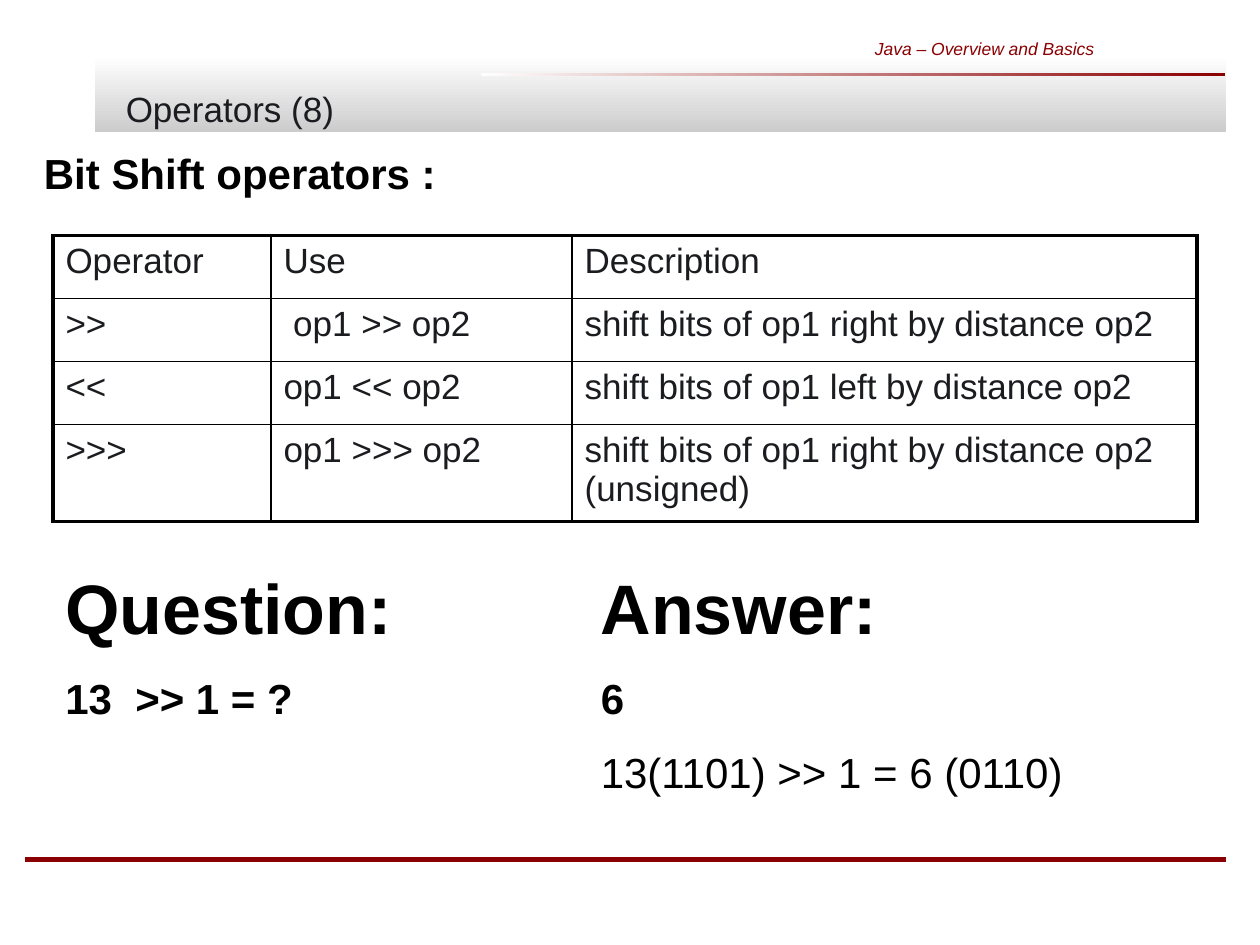
from lxml import etree
from pptx import Presentation
from pptx.dml.color import RGBColor
from pptx.enum.shapes import MSO_CONNECTOR as CONN, MSO_SHAPE as SHAPE
from pptx.enum.text import MSO_ANCHOR as ANCHOR, PP_ALIGN as ALIGN
from pptx.oxml import parse_xml
from pptx.oxml.ns import nsdecls, qn
from pptx.util import Inches, Pt

WHITE = RGBColor(0xFF, 0xFF, 0xFF)
GRAY = RGBColor(0xCC, 0xCC, 0xCC)
RED = RGBColor(0x8B, 0x00, 0x02)
INK = RGBColor(0x1B, 0x1C, 0x20)
BLACK = RGBColor(0x00, 0x00, 0x00)


class SlideBuilder:
    font = "Arial"
    thin, thick = 1, 2.25

    def __init__(self, slide):
        self.s = slide

    def style(self, p, size, color, bold=False, italic=False):
        for r in p.runs:
            f = r.font
            f.name, f.size, f.bold, f.italic = self.font, Pt(size), bold, italic
            f.color.rgb = color

    def gradient_bar(self, x, y, w, h, end, angle):
        sp = self.s.shapes.add_shape(SHAPE.RECTANGLE, Inches(x), Inches(y), Inches(w), Inches(h))
        sp.shadow.inherit = False
        sp.line.fill.background()
        sp.fill.gradient()
        sp.fill.gradient_angle = angle
        for stop, color in zip(sp.fill.gradient_stops, (WHITE, end)):
            stop.color.rgb = color

    def rule(self, x1, x2, y, color, width):
        line = self.s.shapes.add_connector(CONN.STRAIGHT, Inches(x1), Inches(y), Inches(x2), Inches(y))
        line.line.color.rgb = color
        line.line.width = Pt(width)
        etree.SubElement(line._element.spPr, qn("a:effectLst"))

    def text(self, x, y, w, h, lines, color=BLACK, anchor=ANCHOR.TOP, align=ALIGN.LEFT,
             italic=False, top=0.05, gap=0):
        """Each line is (text, size, bold)."""
        sp = self.s.shapes.add_textbox(Inches(x), Inches(y), Inches(w), Inches(h))
        tf = sp.text_frame
        tf.word_wrap = True
        tf.vertical_anchor = anchor
        tf.margin_top = Inches(top)
        for i, (text, size, bold) in enumerate(lines):
            p = tf.add_paragraph() if i else tf.paragraphs[0]
            p.text = text
            p.alignment = align
            if i:
                p.space_before = Pt(gap)
            self.style(p, size, color, bold, italic)
        return sp

    def text_shadow(self, sp, color):
        for r in sp.text_frame.paragraphs[0].runs:
            fill = r.font._element.find(qn("a:solidFill"))
            fill.addnext(parse_xml(
                f'<a:effectLst {nsdecls("a")}><a:outerShdw dist="35921" dir="2700000">'
                f'<a:srgbClr val="{color}"/></a:outerShdw></a:effectLst>'))

    def borders(self, cell, widths):
        tc_pr = cell._tc.get_or_add_tcPr()
        for i, (side, width) in enumerate(widths.items()):
            tc_pr.insert(i, parse_xml(
                f'<a:ln{side} {nsdecls("a")} w="{Pt(width)}"><a:solidFill>'
                f'<a:srgbClr val="{BLACK}"/></a:solidFill></a:ln{side}>'))

    def table(self, x, y, cols, rows, data, size, color):
        frame = self.s.shapes.add_table(len(rows), len(cols), Inches(x), Inches(y),
                                        Inches(sum(cols)), Inches(sum(rows)))
        tbl = frame.table
        tbl.first_row = tbl.horz_banding = False
        for col, w in zip(tbl.columns, cols):
            col.width = Inches(w)
        for row, h in zip(tbl.rows, rows):
            row.height = Inches(h)
        for i, values in enumerate(data):
            for j, value in enumerate(values):
                cell = tbl.cell(i, j)
                cell.text = value
                cell.fill.background()
                self.style(cell.text_frame.paragraphs[0], size, color)
                outer = {"L": j == 0, "R": j == len(cols) - 1,
                         "T": i == 0, "B": i == len(rows) - 1}
                self.borders(cell, {side: self.thick if edge else self.thin
                                    for side, edge in outer.items()})


def main():
    prs = Presentation()
    prs.slide_width, prs.slide_height = Inches(10), Inches(7.5)
    b = SlideBuilder(prs.slides.add_slide(prs.slide_layouts[6]))

    # Header band and rules
    b.gradient_bar(0.75, 0.44, 8.98, 0.61, GRAY, 270)
    b.rule(0.2, 9.73, 6.82, RED, 3)
    b.gradient_bar(3.82, 0.58, 5.9, 0.02, RED, 0)

    # Course name, title and heading
    b.text(5.87, 0.19, 2.91, 0.39, [("Java – Overview and Basics", 10, False)], RED,
           ANCHOR.MIDDLE, ALIGN.RIGHT, italic=True)
    title = b.text(0.9, 0, 9.1, 1.08, [("Operators (8)", 20, False)], INK, ANCHOR.BOTTOM)
    b.text_shadow(title, WHITE)
    b.text(0.25, 1.08, 9.75, 1.59, [("Bit Shift operators :", 24, True)], top=0.09)

    # Operator table
    b.table(0.42, 1.87, [1.73, 2.39, 4.96], [0.5, 0.5, 0.5, 0.76], [
        ("Operator", "Use", "Description"),
        (">>", " op1 >> op2", "shift bits of op1 right by distance op2"),
        ("<<", "op1 << op2", "shift bits of op1 left by distance op2"),
        (">>>", "op1 >>> op2", "shift bits of op1 right by distance op2 (unsigned)"),
    ], 20, INK)

    # Question and answer
    b.text(0.42, 4.38, 3.67, 1.37, [("Question:", 40, True), ("13  >> 1 = ?", 24, True)],
           top=0.1, gap=13.5)
    b.text(4.67, 4.38, 4.83, 1.97, [("Answer:", 40, True), ("6", 24, True),
                                    ("13(1101) >> 1 = 6 (0110)", 24, False)],
           top=0.1, gap=13.5)

    prs.save("out.pptx")


if __name__ == "__main__":
    main()
